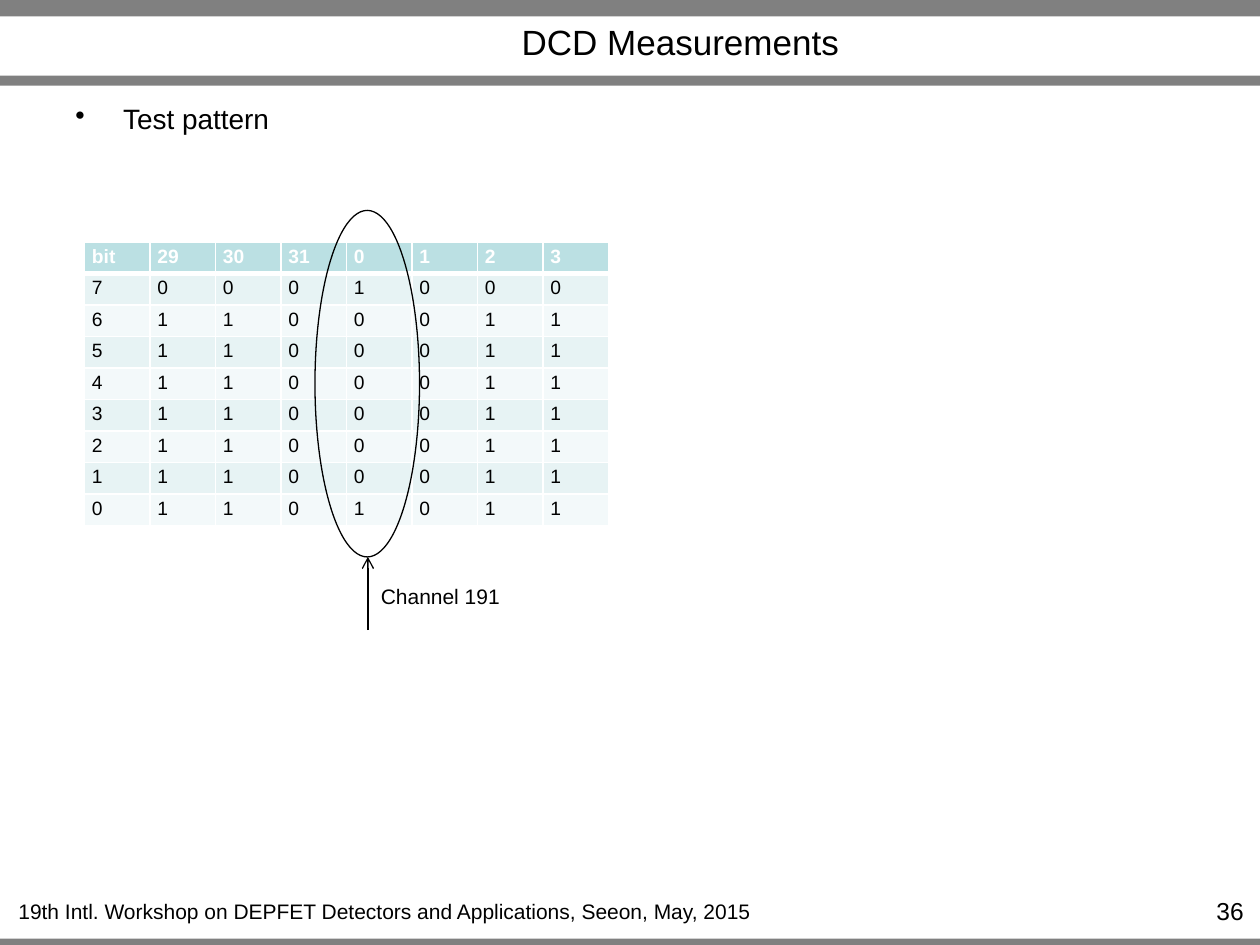
"""Build the DCD Measurements slide with its test pattern table."""
from lxml import etree
from pptx import Presentation
from pptx import util as u
from pptx.dml import color
from pptx.enum import shapes, text
from pptx.oxml import ns

BLACK, WHITE, GREY = "000000", "FFFFFF", "808080"
HEADER_FILL, BAND_FILLS = "BBE0E3", ("E7F3F4", "F3F9FA")
LEFT, CENTER, RIGHT = text.PP_ALIGN.LEFT, text.PP_ALIGN.CENTER, text.PP_ALIGN.RIGHT

TITLE = "DCD Measurements"
BARS = [(0, 0.13), (0.6, 0.08), (7.45, 0.08)]
LABELS = [
    ("19th Intl. Workshop on DEPFET Detectors and Applications, Seeon, May, 2015",
     (0.02, 7.08, 6.07, 0.3), 12, CENTER, False),
    ("36", (9.1, 7.06, 0.87, 0.24), 14, RIGHT, True),
    ("Channel 191", (2.92, 4.58, 1.15, 0.3), 12, CENTER, False),
]
BULLET = ("Test pattern", (0.5, 0.76, 9, 1.08), 16, LEFT, True)
HEADER = ["bit", "29", "30", "31", "0", "1", "2", "3"]
PATTERN = [
    "70001000",
    "61100011",
    "51100011",
    "41100011",
    "31100011",
    "21100011",
    "11100011",
    "01101011",
]
TABLE_LEFT, TABLE_TOP, COLUMN_WIDTH, ROW_HEIGHT = 0.67, 1.92, 0.52, 0.25
CELL_MARGINS = {"margin_left": 0.06, "margin_right": 0.06,
                "margin_top": 0.03, "margin_bottom": 0.03}
ELLIPSE = (2.5, 1.67, 0.83, 2.75)
ARROW = (2.92, 5, 2.92, 4.42)


def inches(values):
    return [u.Inches(value) for value in values]


def paint(target, value):
    target.solid()
    target.fore_color.rgb = color.RGBColor.from_string(value)


def add_element(parent, tag, **attributes):
    return etree.SubElement(parent, ns.qn(tag), attributes)


def write(paragraph, words, size, alignment, value=BLACK, bold=False):
    paragraph.text = words
    paragraph.alignment = alignment
    for name, setting in {"name": "Arial", "size": u.Pt(size), "bold": bold}.items():
        setattr(paragraph.font, name, setting)
    paragraph.font.color.rgb = color.RGBColor.from_string(value)


def add_label(slide, words, box, size, alignment, wrap):
    frame = slide.shapes.add_textbox(*inches(box)).text_frame
    frame.word_wrap = wrap
    write(frame.paragraphs[0], words, size, alignment)
    return frame.paragraphs[0]


def add_bullet(slide):
    properties = add_label(slide, *BULLET)._p.get_or_add_pPr()
    properties.set("marL", str(u.Inches(0.38)))
    properties.set("indent", str(u.Inches(-0.38)))
    bullet = etree.Element(ns.qn("a:buChar"), char="•")
    properties.insert(0, bullet)


def add_bar(slide, top, height):
    bar = slide.shapes.add_shape(shapes.MSO_SHAPE.RECTANGLE, *inches((0, top, 10, height)))
    bar.shadow.inherit = False
    paint(bar.fill, GREY)
    bar.line.fill.background()


def add_borders(cell, row):
    widths = {"L": 1, "R": 1, "T": 3 if row == 1 else 1, "B": 3 if row == 0 else 1}
    for side, width in widths.items():
        line = add_element(cell._tc.get_or_add_tcPr(), f"a:ln{side}", w=str(u.Pt(width)))
        add_element(add_element(line, "a:solidFill"), "a:srgbClr", val=WHITE)


def add_pattern_table(slide):
    rows = [HEADER, *PATTERN]
    box = (TABLE_LEFT, TABLE_TOP, COLUMN_WIDTH * len(HEADER), ROW_HEIGHT * len(rows))
    table = slide.shapes.add_table(len(rows), len(HEADER), *inches(box)).table
    for column in table.columns:
        column.width = u.Inches(COLUMN_WIDTH)
    for row, values in enumerate(rows):
        table.rows[row].height = u.Inches(ROW_HEIGHT)
        is_header = row == 0
        for column, value in enumerate(values):
            cell = table.cell(row, column)
            for name, margin in CELL_MARGINS.items():
                setattr(cell, name, u.Inches(margin))
            add_borders(cell, row)
            paint(cell.fill, HEADER_FILL if is_header else BAND_FILLS[(row - 1) % 2])
            write(cell.text_frame.paragraphs[0], value, 11, LEFT,
                  WHITE if is_header else BLACK, is_header)


def add_channel_marker(slide):
    arrow = slide.shapes.add_connector(shapes.MSO_CONNECTOR.STRAIGHT, *inches(ARROW))
    ellipse = slide.shapes.add_shape(shapes.MSO_SHAPE.OVAL, *inches(ELLIPSE))
    ellipse.shadow.inherit = False
    ellipse.fill.background()
    for shape in (arrow, ellipse):
        paint(shape.line.fill, BLACK)
        shape.line.width = u.Pt(0.75)
    add_element(arrow.line._get_or_add_ln(), "a:tailEnd", type="arrow")
    add_element(arrow._element.spPr, "a:effectLst")


def add_title(slide):
    title = slide.shapes.title
    box = dict(zip(("left", "top", "width", "height"), inches((1.3, 0.14, 8.2, 0.38))))
    for name, value in box.items():
        setattr(title, name, value)
    title.text_frame.vertical_anchor = text.MSO_ANCHOR.MIDDLE
    write(title.text_frame.paragraphs[0], TITLE, 20, CENTER)


def main():
    presentation = Presentation()
    presentation.slide_width, presentation.slide_height = inches((10, 7.5))
    slide = presentation.slides.add_slide(presentation.slide_layouts[5])
    paint(slide.background.fill, WHITE)
    for bar in BARS:
        add_bar(slide, *bar)
    add_title(slide)
    add_bullet(slide)
    add_pattern_table(slide)
    for label in LABELS:
        add_label(slide, *label)
    add_channel_marker(slide)
    presentation.save("out.pptx")


if __name__ == "__main__":
    main()
